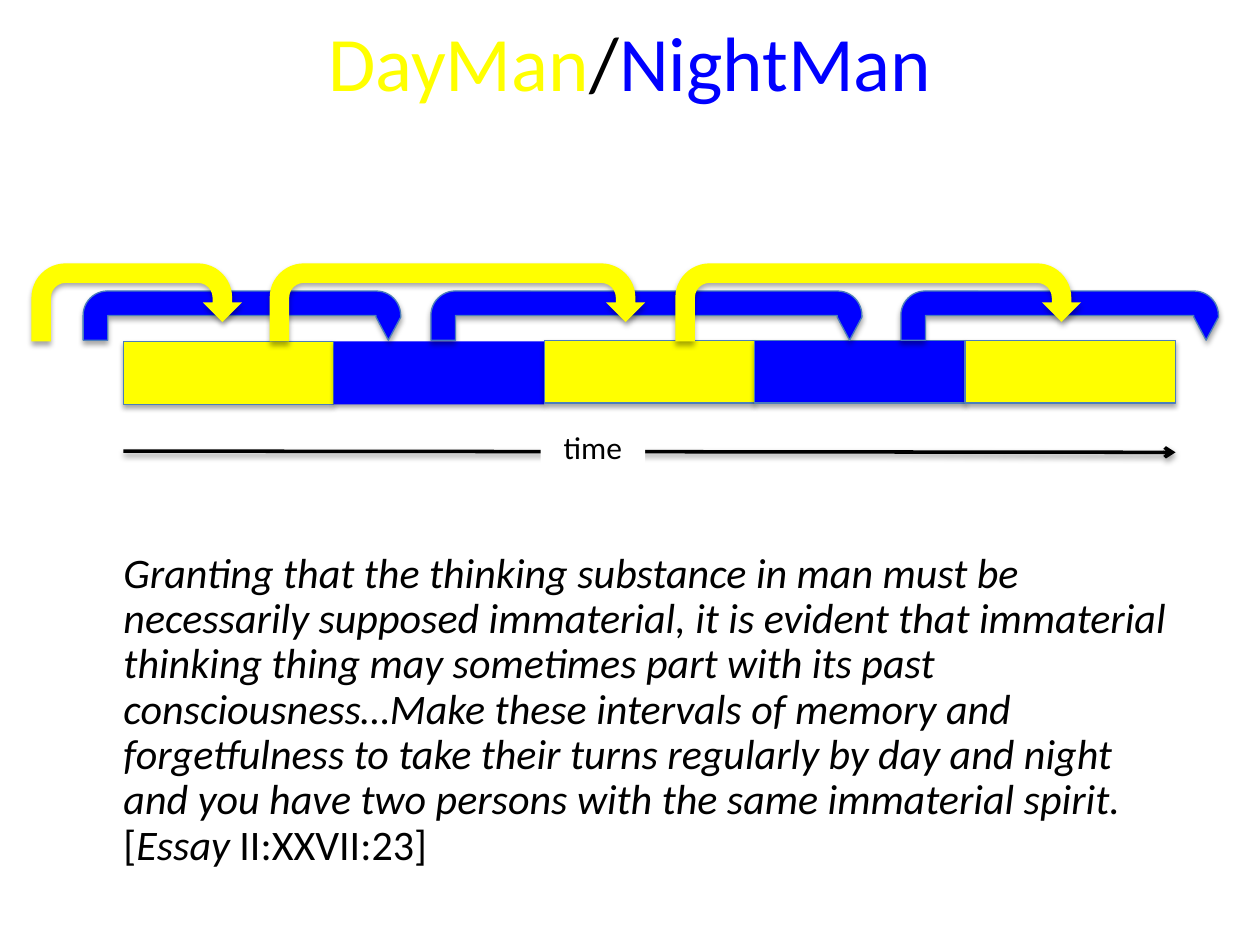
from dataclasses import dataclass
from typing import Any, Optional

from lxml import etree
from pptx import Presentation, util as u
from pptx.dml.color import RGBColor
from pptx.enum import shapes, text
from pptx.oxml.ns import qn

Box = tuple[float, float, float, float]


@dataclass(frozen=True)
class Theme:
    font: str = "Calibri"
    day: str = "FFFF00"
    night: str = "0000FF"
    ink: str = "000000"
    paper: str = "FFFFFF"
    outline: str = "4B7EBC"
    title_size: int = 44
    body_size: int = 24
    label_size: int = 18
    outline_width: float = 0.75
    axis_width: float = 2


@dataclass(frozen=True)
class Piece:
    kind: shapes.MSO_SHAPE
    box: Box
    fill: str
    outlined: bool = True
    adjustments: tuple[float, ...] = ()


@dataclass(frozen=True)
class Words:
    content: str
    size: int
    color: str
    italic: Optional[bool] = None


THEME = Theme()
RECTANGLE = shapes.MSO_SHAPE.RECTANGLE
U_TURN = shapes.MSO_SHAPE.U_TURN_ARROW

PERIOD_LEFT, PERIOD_WIDTH, PERIOD_HEIGHT = 0.98, 1.67, 0.5
PERIOD_TOPS = (2.71, 2.71, 2.7, 2.7, 2.7)
UNLINED_PERIOD = 1
NIGHT_ARROWS = ((3.42, 3.42), (7.15, 2.52), (0.66, 2.52))  # left, width
DAY_ARROWS = ((2.14, 2.98), (5.36, 3.22), (0.25, 1.67))
NIGHT_BEND = (0.5, 0.25, 0.468, 0.493, 1)

QUOTE = (
    "Granting that the thinking substance in man must be necessarily supposed "
    "immaterial, it is evident that immaterial thinking thing may sometimes part "
    "with its past consciousness…Make these intervals of memory and forgetfulness "
    "to take their turns regularly by day and night and you have two persons with "
    "the same immaterial spirit."
)


def apply(target: Any, values: dict[str, Any]) -> None:
    for name, value in values.items():
        setattr(target, name, value)


def place(shape: Any, box: Box) -> None:
    lengths = (u.Inches(length) for length in box)
    apply(shape, dict(zip(("left", "top", "width", "height"), lengths)))


def write(paragraph: Any, parts: list[Words]) -> None:
    for part in parts:
        run = paragraph.add_run()
        run.text = part.content
        apply(run.font, {"name": THEME.font, "size": u.Pt(part.size), "italic": part.italic})
        run.font.color.rgb = RGBColor.from_string(part.color)


def add_shadow(shape: Any, opacity: int, distance: float) -> None:
    """Cast a soft shadow straight down; call after fill and line are set."""
    effects = etree.SubElement(shape._element.spPr, qn("a:effectLst"))
    shadow = etree.SubElement(
        effects, qn("a:outerShdw"), blurRad=str(u.Pt(3.1)), dist=str(u.Pt(distance)),
        dir="5400000", rotWithShape="0",
    )
    color = etree.SubElement(shadow, qn("a:srgbClr"), val=THEME.ink)
    etree.SubElement(color, qn("a:alpha"), val=str(opacity * 1000))


def draw_piece(slide: Any, piece: Piece) -> None:
    shape = slide.shapes.add_shape(piece.kind, *map(u.Inches, piece.box))
    for index, value in enumerate(piece.adjustments):
        shape.adjustments[index] = value
    shape.fill.solid()
    shape.fill.fore_color.rgb = RGBColor.from_string(piece.fill)
    if piece.outlined:
        shape.line.color.rgb = RGBColor.from_string(THEME.outline)
        shape.line.width = u.Pt(THEME.outline_width)
    else:
        shape.line.fill.background()
    add_shadow(shape, 35, 1.8)


def period(index: int) -> Piece:
    left = PERIOD_LEFT + index * PERIOD_WIDTH
    return Piece(
        RECTANGLE, (left, PERIOD_TOPS[index], PERIOD_WIDTH, PERIOD_HEIGHT),
        THEME.night if index % 2 else THEME.day, index != UNLINED_PERIOD,
    )


def draw_time_axis(slide: Any) -> None:
    ends = map(u.Inches, (0.98, 3.58, 9.33, 3.59))
    axis = slide.shapes.add_connector(shapes.MSO_CONNECTOR.STRAIGHT, *ends)
    axis.line.color.rgb = RGBColor.from_string(THEME.ink)
    axis.line.width = u.Pt(THEME.axis_width)
    etree.SubElement(axis.line._get_or_add_ln(), qn("a:tailEnd"), type="arrow")
    add_shadow(axis, 38, 1.6)

    label = slide.shapes.add_textbox(*map(u.Inches, (4.29, 3.35, 0.83, 0.4)))
    label.fill.solid()
    label.fill.fore_color.rgb = RGBColor.from_string(THEME.paper)
    apply(label.text_frame, {"word_wrap": True, "auto_size": text.MSO_AUTO_SIZE.SHAPE_TO_FIT_TEXT})
    paragraph = label.text_frame.paragraphs[0]
    paragraph.alignment = text.PP_ALIGN.CENTER
    write(paragraph, [Words("time", THEME.label_size, THEME.ink)])


def fill_title(title: Any) -> None:
    place(title, (0.5, 0.01, 9, 0.95))
    title.text_frame.vertical_anchor = text.MSO_ANCHOR.MIDDLE
    paragraph = title.text_frame.paragraphs[0]
    paragraph.alignment = text.PP_ALIGN.CENTER
    colored = (("DayMan", THEME.day), ("/", THEME.ink), ("NightMan", THEME.night))
    write(paragraph, [Words(word, THEME.title_size, color) for word, color in colored])


def fill_quote(body: Any) -> None:
    place(body, (0.5, 4.33, 9, 2.75))
    body.text_frame.auto_size = text.MSO_AUTO_SIZE.NONE
    paragraph = body.text_frame.paragraphs[0]
    apply(paragraph, {"line_spacing": 0.9, "space_before": u.Pt(4.8), "space_after": u.Pt(24)})
    properties = paragraph._p.get_or_add_pPr()
    properties.set("marL", str(u.Inches(0.38)))
    properties.set("indent", "0")
    etree.SubElement(properties, qn("a:buNone"))
    parts = ((QUOTE, True), (" [", False), ("Essay ", True), ("II:XXVII:23]", False))
    write(paragraph, [Words(part, THEME.body_size, THEME.ink, italic) for part, italic in parts])


def main() -> None:
    presentation = Presentation()
    apply(presentation, {"slide_width": u.Inches(10), "slide_height": u.Inches(7.5)})
    slide = presentation.slides.add_slide(presentation.slide_layouts[1])
    fill_title(slide.shapes.title)
    fill_quote(slide.placeholders[1])
    for index in range(len(PERIOD_TOPS)):
        draw_piece(slide, period(index))
    draw_time_axis(slide)
    for left, width in NIGHT_ARROWS:
        draw_piece(slide, Piece(U_TURN, (left, 2.31, width, 0.39), THEME.night, True, NIGHT_BEND))
    for left, width in DAY_ARROWS:
        draw_piece(slide, Piece(U_TURN, (left, 2.09, width, 0.62), THEME.day, False))
    presentation.save("out.pptx")


if __name__ == "__main__":
    main()
